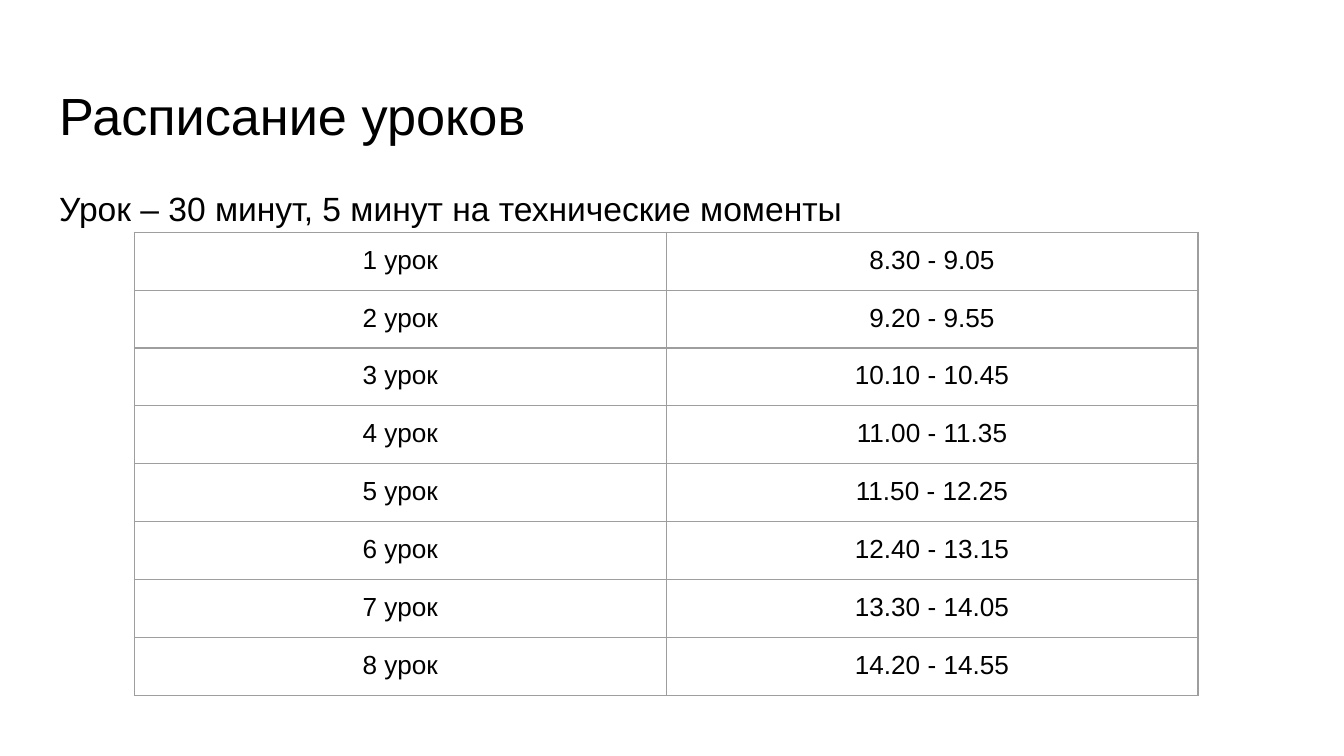
from typing import NamedTuple

from lxml.etree import SubElement as Sub
from pptx import Presentation
from pptx.dml.color import RGBColor
from pptx.enum.text import MSO_ANCHOR as Anchor, PP_ALIGN as Align
from pptx.oxml.ns import qn
from pptx.util import Cm, Pt

INK, GRID = "000000", "9E9E9E"
INSET = Cm(0.25)
ROW_H, COL_W = Cm(1.06), Cm(10.05)


class Lesson(NamedTuple):
    name: str
    time: str


TIMES = ["8.30 - 9.05", "9.20 - 9.55", "10.10 - 10.45", "11.00 - 11.35",
         "11.50 - 12.25", "12.40 - 13.15", "13.30 - 14.05", "14.20 - 14.55"]
LESSONS = [Lesson(f"{n} урок", time) for n, time in enumerate(TIMES, 1)]


def color(value: str) -> RGBColor:
    return RGBColor.from_string(value)


def set_attrs(obj, formats: dict) -> None:
    for name, value in formats.items():
        setattr(obj, name, value)


def write(p, text: str, size: float, **formats) -> None:
    set_attrs(p, formats)
    r = p.add_run()
    r.text = text
    set_attrs(r.font, {"name": "Arial", "size": Pt(size)})
    r.font.color.rgb = color(INK)


def add_borders(cell) -> None:
    tc_pr = cell._tc.get_or_add_tcPr()
    for i, side in enumerate(("lnL", "lnR", "lnT", "lnB")):
        ln = Sub(tc_pr, qn(f"a:{side}"), w=str(Pt(0.75)))
        Sub(Sub(ln, qn("a:solidFill")), qn("a:srgbClr"), val=GRID)
        tc_pr.remove(ln)
        tc_pr.insert(i, ln)  # borders come before the fill


def add_heading(s) -> None:
    tf = s.shapes.add_textbox(Cm(0.87), Cm(1.24), Cm(23.67), Cm(1.6)).text_frame
    set_attrs(tf, {"word_wrap": True, "vertical_anchor": Anchor.TOP,
                   "margin_left": INSET, "margin_right": INSET,
                   "margin_top": Cm(0.33), "margin_bottom": INSET})
    write(tf.paragraphs[0], "Расписание уроков", 28)
    write(tf.add_paragraph(), "Урок – 30 минут, 5 минут на технические моменты",
          18, space_before=Pt(22.5))


def add_schedule(s, lessons: list[Lesson]) -> None:
    rows, cols = len(lessons), len(Lesson._fields)
    table = s.shapes.add_table(rows, cols, Cm(2.54), Cm(4.39),
                               COL_W * cols, ROW_H * rows).table
    set_attrs(table, {"first_row": False, "horz_banding": False})
    for row, lesson in zip(table.rows, lessons):
        row.height = ROW_H
        for cell, text in zip(row.cells, lesson):
            set_attrs(cell, {f"margin_{side}": INSET
                             for side in ("left", "right", "top", "bottom")})
            cell.fill.background()
            add_borders(cell)
            write(cell.text_frame.paragraphs[0], text, 14, alignment=Align.CENTER)


def main() -> None:
    prs = Presentation()
    set_attrs(prs, {"slide_width": Cm(25.4), "slide_height": Cm(14.29)})
    s = prs.slides.add_slide(prs.slide_layouts[6])

    # Title and lesson length
    add_heading(s)
    # Timetable
    add_schedule(s, LESSONS)

    prs.save("out.pptx")


if __name__ == "__main__":
    main()
